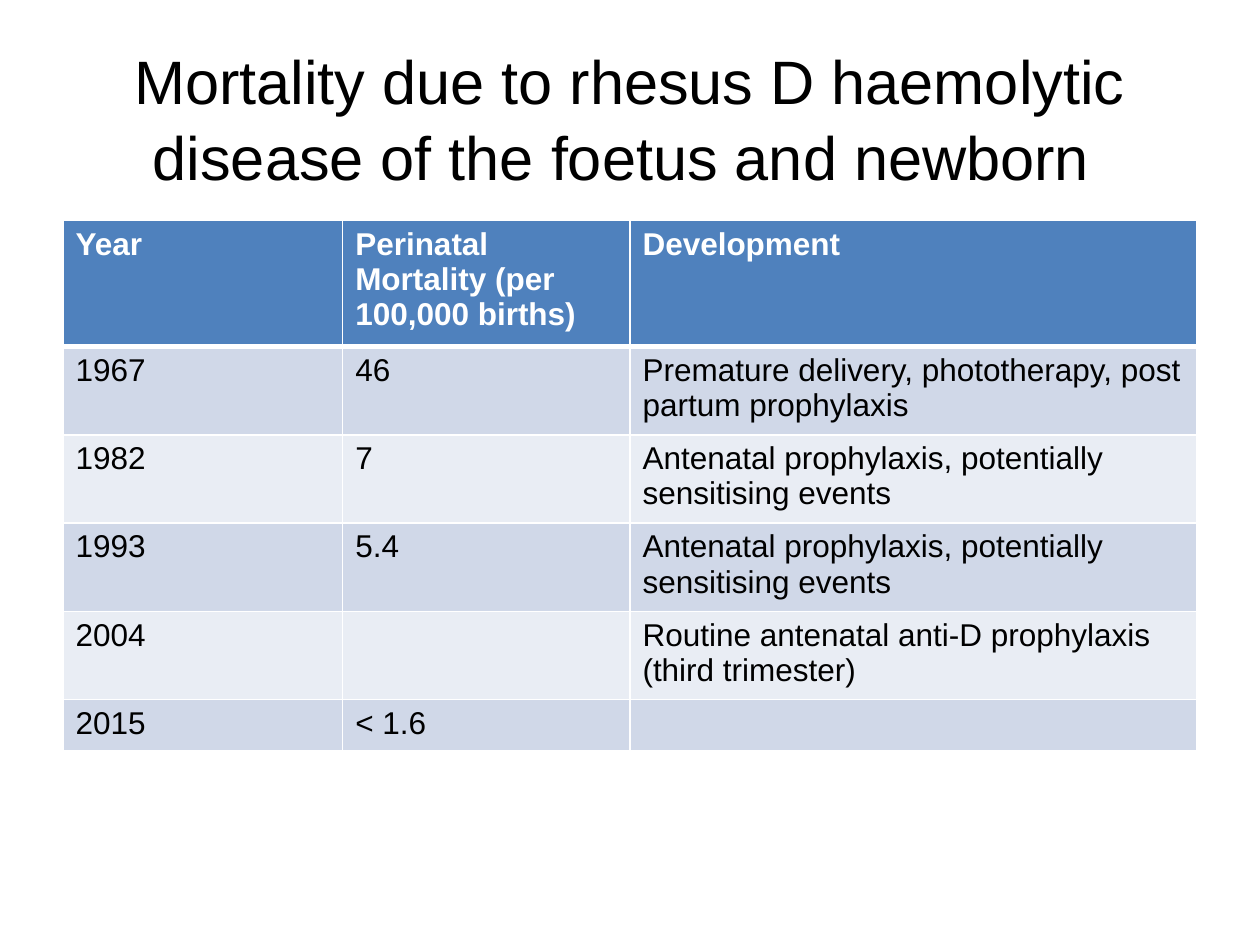
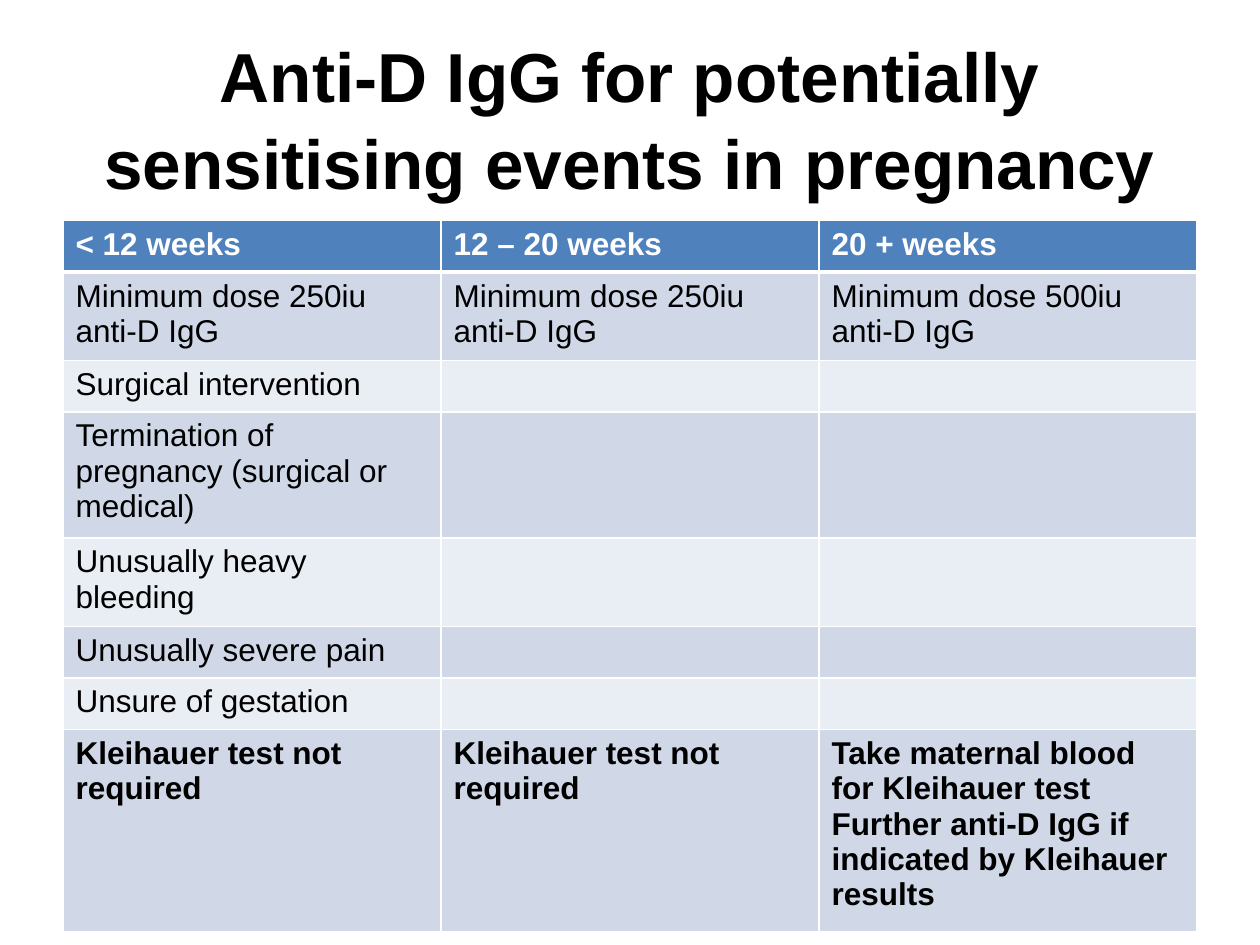
from lxml import etree
from pptx import Presentation
from pptx.dml.color import RGBColor
from pptx.enum.text import MSO_ANCHOR, PP_ALIGN
from pptx.oxml.ns import qn
from pptx.util import Inches, Pt

LEFT, CENTER = PP_ALIGN.LEFT, PP_ALIGN.CENTER
MIDDLE = MSO_ANCHOR.MIDDLE

FONT = "Arial"
HEX = {"text": "000000", "head": "4F81BD", "odd": "D0D8E8",
       "even": "E9EDF4", "white": "FFFFFF"}
ROW_H = 0.41


def write(frame, text, size=18, color="text", bold=False, align=LEFT, space=None):
    para = frame.paragraphs[0]
    para.text = text
    para.alignment = align
    para.line_spacing = space
    for run in para.runs:
        run.font.name = FONT
        run.font.size = Pt(size)
        run.font.bold = bold
        run.font.color.rgb = RGBColor.from_string(HEX[color])


def border(cell, side, width):
    line = etree.SubElement(cell._tc.get_or_add_tcPr(), qn("a:ln" + side),
                            w=str(Pt(width)))
    fill = etree.SubElement(line, qn("a:solidFill"))
    etree.SubElement(fill, qn("a:srgbClr"), val=HEX["white"])


# Content: title, title format, column widths, rows, bold last row
slides = [
    ("Mortality due to rhesus D haemolytic disease of the foetus and newborn ",
     {"size": 35}, [2.22, 2.28, 4.5],
     [["Year", "Perinatal Mortality (per 100,000 births)", "Development"],
      ["1967", "46", "Premature delivery, phototherapy, post partum prophylaxis"],
      ["1982", "7", "Antenatal prophylaxis, potentially sensitising events"],
      ["1993", "5.4", "Antenatal prophylaxis, potentially sensitising events"],
      ["2004", "", "Routine antenatal anti-D prophylaxis (third trimester)"],
      ["2015", "< 1.6", ""]],
     False),
    ("Anti-D IgG for potentially sensitising events in pregnancy",
     {"size": 39.6, "bold": True}, [3, 3, 3],
     [["< 12 weeks", "12 – 20 weeks", "20 + weeks"],
      ["Minimum dose 250iu\nanti-D IgG", "Minimum dose 250iu \nanti-D IgG",
       "Minimum dose 500iu \nanti-D IgG"],
      ["Surgical intervention", "", ""],
      ["Termination of pregnancy (surgical or medical)", "", ""],
      ["Unusually heavy bleeding", "", ""],
      ["Unusually severe pain", "", ""],
      ["Unsure of gestation", "", ""],
      ["Kleihauer test not required", "Kleihauer test not required",
       "Take maternal blood for Kleihauer test\n"
       "Further anti-D IgG if indicated by Kleihauer results"]],
     True),
]

deck = Presentation()
deck.slide_width, deck.slide_height = Inches(10), Inches(7.5)

for title, style, widths, rows, strong in slides:
    slide = deck.slides.add_slide(deck.slide_layouts[6])

    # Title
    box = slide.shapes.add_textbox(Inches(0.5), Inches(0.3), Inches(9), Inches(1.25))
    box.text_frame.word_wrap = True
    box.text_frame.vertical_anchor = MIDDLE
    write(box.text_frame, title, align=CENTER, space=1.04, **style)

    # Table
    table = slide.shapes.add_table(
        len(rows), len(widths), Inches(0.5), Inches(1.75),
        Inches(9), Inches(ROW_H * len(rows))).table
    table.horz_banding = False
    for col, width in zip(table.columns, widths):
        col.width = Inches(width)

    # Cells: header row, then two alternating bands
    for r, row in enumerate(rows):
        table.rows[r].height = Inches(ROW_H)
        head = r == 0
        band = "head" if head else "odd" if r % 2 else "even"
        bold = head or (strong and r == len(rows) - 1)
        for c, text in enumerate(row):
            cell = table.cell(r, c)
            for side in "LRTB":
                thick = (r, side) in [(0, "B"), (1, "T")]
                border(cell, side, 3 if thick else 1)
            cell.fill.solid()
            cell.fill.fore_color.rgb = RGBColor.from_string(HEX[band])
            if text:
                write(cell.text_frame, text, bold=bold,
                      color="white" if head else "text")

deck.save("out.pptx")
